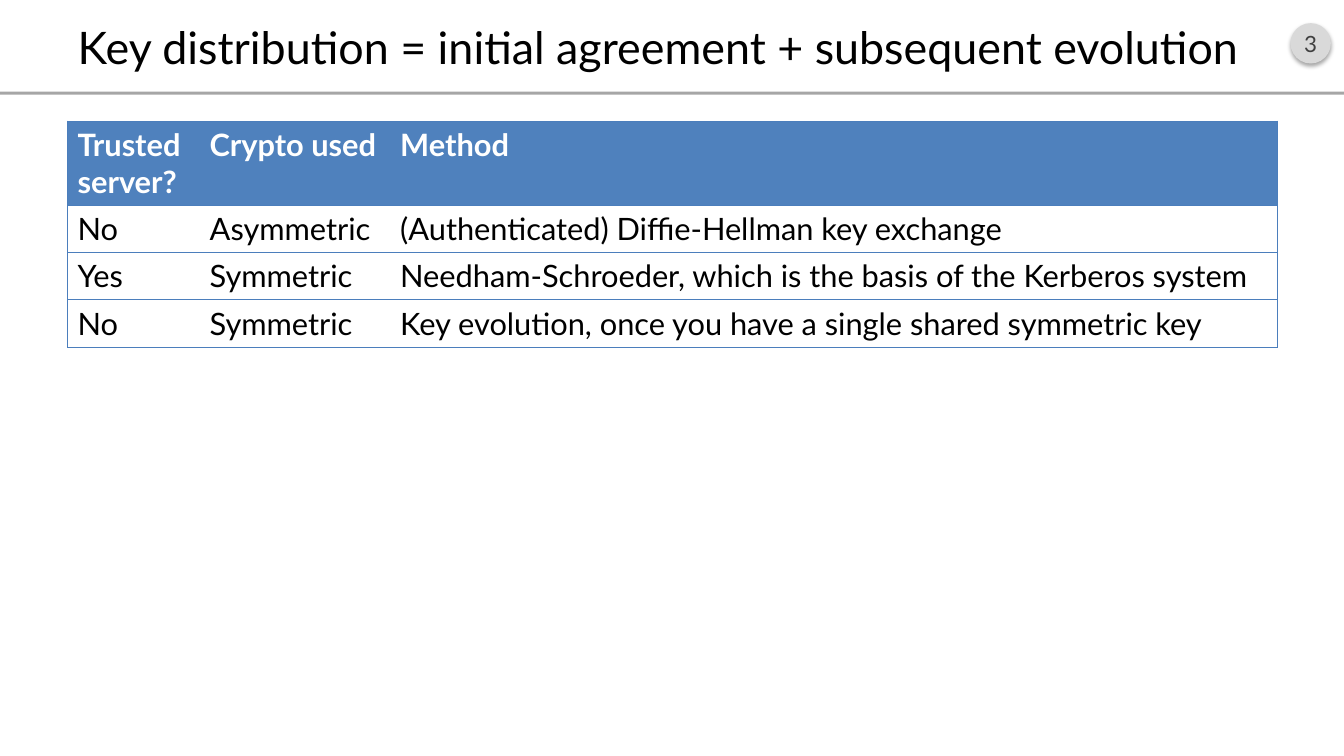
import pptx
import pptx.util
import pptx.dml.color
import pptx.enum.shapes
import pptx.enum.text
import pptx.oxml
import pptx.oxml.ns
from pptx.util import Inches

FONT = "Lato"
COLORS = {
    "text": "000000",
    "header text": "FFFFFF",
    "header": "4F81BD",
    "row": "FFFFFF",
    "border": "4B7EBC",
    "badge": "D9D9D9",
    "badge text": "404040",
    "rule": "A6A6A6",
}
NO_GRID_STYLE = "{2D5ABB26-0587-4C30-8999-92F81FD0307C}"
COLUMN_WIDTHS = [1.31, 1.89, 8.8]
ROW_HEIGHTS = [0.83, 0.47, 0.47, 0.47]
METHODS = [
    ["Trusted server?", "Crypto used", "Method"],
    ["No", "Asymmetric", "(Authenticated) Diffie-Hellman key exchange"],
    ["Yes", "Symmetric", "Needham-Schroeder, which is the basis of the Kerberos system"],
    ["No", "Symmetric", "Key evolution, once you have a single shared symmetric key"],
]


def rgb(name):
    return pptx.dml.color.RGBColor.from_string(COLORS[name])


def write_text(frame, text, size, color="text", bold=False, align="LEFT"):
    frame.word_wrap = True
    paragraph = frame.paragraphs[0]
    paragraph.alignment = getattr(pptx.enum.text.PP_ALIGN, align)
    run = paragraph.add_run()
    run.text = text
    run.font.name = FONT
    run.font.size = pptx.util.Pt(size)
    run.font.bold = bold
    run.font.color.rgb = rgb(color)


def add_filled_shape(slide, kind, left, top, width, height, color):
    shape = slide.shapes.add_shape(
        kind, Inches(left), Inches(top), Inches(width), Inches(height))
    shape.shadow.inherit = False
    shape.fill.solid()
    shape.fill.fore_color.rgb = rgb(color)
    shape.line.fill.background()
    return shape


def add_drop_shadow(shape):
    effects = shape._element.spPr.find(pptx.oxml.ns.qn("a:effectLst"))
    effects.append(pptx.oxml.parse_xml(
        f'<a:outerShdw {pptx.oxml.ns.nsdecls("a")} blurRad="{pptx.util.Pt(3.1)}" '
        f'dist="{pptx.util.Pt(1.8)}" dir="5400000" rotWithShape="0">'
        '<a:srgbClr val="000000"><a:alpha val="35000"/></a:srgbClr></a:outerShdw>'))


def add_page_badge(slide, number):
    badge = add_filled_shape(
        slide, pptx.enum.shapes.MSO_SHAPE.OVAL, 12.8, 0.23, 0.4, 0.4, "badge")
    add_drop_shadow(badge)
    frame = badge.text_frame
    frame.margin_left = frame.margin_right = 0
    frame.vertical_anchor = pptx.enum.text.MSO_ANCHOR.MIDDLE
    write_text(frame, number, size=16, color="badge text", align="CENTER")


def set_title(slide, text):
    title = slide.shapes.title
    title.left, title.top = Inches(0.67), Inches(0.16)
    title.width, title.height = Inches(12), Inches(0.6)
    frame = title.text_frame
    frame.auto_size = pptx.enum.text.MSO_AUTO_SIZE.NONE
    frame.vertical_anchor = pptx.enum.text.MSO_ANCHOR.MIDDLE
    write_text(frame, text, size=32)


def set_borders(cell, sides):
    properties = cell._tc.get_or_add_tcPr()
    for position, side in enumerate(sides):
        properties.insert(position, pptx.oxml.parse_xml(
            f'<a:ln{side} {pptx.oxml.ns.nsdecls("a")} w="{pptx.util.Pt(0.75)}">'
            f'<a:solidFill><a:srgbClr val="{COLORS["border"]}"/></a:solidFill>'
            f'</a:ln{side}>'))


def add_methods_table(slide):
    table = slide.shapes.add_table(
        len(METHODS), len(COLUMN_WIDTHS), Inches(0.67), Inches(1.2),
        Inches(sum(COLUMN_WIDTHS)), Inches(sum(ROW_HEIGHTS))).table
    table.horz_banding = False
    style = table._tbl.tblPr.find(pptx.oxml.ns.qn("a:tableStyleId"))
    style.text = NO_GRID_STYLE
    for column, width in zip(table.columns, COLUMN_WIDTHS):
        column.width = Inches(width)
    for row, height in zip(table.rows, ROW_HEIGHTS):
        row.height = Inches(height)

    last_column = len(COLUMN_WIDTHS) - 1
    for row_index, entries in enumerate(METHODS):
        is_header = row_index == 0
        for column_index, entry in enumerate(entries):
            cell = table.cell(row_index, column_index)
            cell.fill.solid()
            cell.fill.fore_color.rgb = rgb("header" if is_header else "row")
            write_text(cell.text_frame, entry, size=22, bold=is_header,
                       color="header text" if is_header else "text")
            # Outer frame and lines between rows, none between columns
            left = "L" if column_index == 0 else ""
            right = "R" if column_index == last_column else ""
            set_borders(cell, left + right + "TB")


def main():
    deck = pptx.Presentation()
    deck.slide_width, deck.slide_height = Inches(13.33), Inches(7.5)
    slide = deck.slides.add_slide(deck.slide_layouts[5])

    # Heading band
    add_page_badge(slide, "3")
    add_filled_shape(slide, pptx.enum.shapes.MSO_SHAPE.RECTANGLE,
                     0, 0.91, 13.33, 0.03, "rule")
    set_title(slide, "Key distribution = initial agreement + subsequent evolution")

    # Key distribution methods
    add_methods_table(slide)
    deck.save("out.pptx")


if __name__ == "__main__":
    main()
